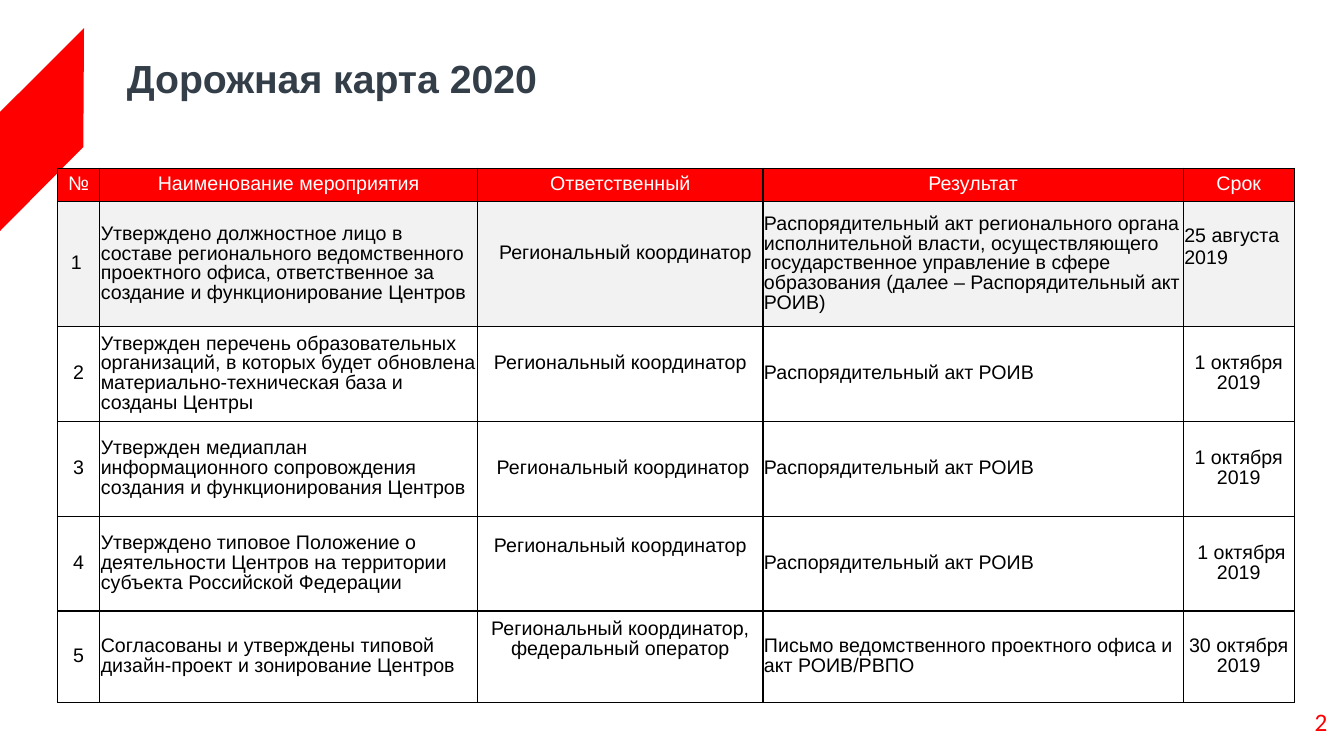
import pptx
import pptx.dml.color
import pptx.enum.text
import pptx.oxml
import pptx.oxml.ns
import pptx.util

Pt = pptx.util.Pt
Align = pptx.enum.text.PP_ALIGN
Anchor = pptx.enum.text.MSO_ANCHOR

COLORS = {
    "accent": "FF0000",
    "title": "333E48",
    "text": "000000",
    "border": "000000",
    "header_text": "FFFFFF",
    "row": "FFFFFF",
    "first_row": "F2F2F2",
}

COLUMN_WIDTHS = [30.25, 270, 203.75, 300.25, 79.25]
ROW_HEIGHTS = [23.75, 89.25, 67.75, 67.75, 67.75, 65.5]
COLUMN_ALIGNS = [Align.CENTER, Align.LEFT, Align.CENTER, Align.LEFT, Align.CENTER]

HEADER = ["№", "Наименование мероприятия", "Ответственный", "Результат", "Срок"]
ACTIVITIES = [
    ["1",
     "Утверждено должностное лицо в составе регионального ведомственного проектного офиса, "
     "ответственное за создание и функционирование Центров",
     "Региональный координатор",
     "Распорядительный акт регионального органа исполнительной власти, осуществляющего "
     "государственное управление в сфере образования (далее – Распорядительный акт РОИВ)",
     "25 августа 2019"],
    ["2",
     "Утвержден перечень образовательных организаций, в которых будет обновлена "
     "материально-техническая база и созданы Центры",
     "Региональный координатор", "Распорядительный акт РОИВ", "1 октября 2019"],
    ["3",
     "Утвержден медиаплан информационного сопровождения создания и функционирования Центров",
     "Региональный координатор", "Распорядительный акт РОИВ", "1 октября 2019"],
    ["4",
     "Утверждено типовое Положение о деятельности Центров на территории субъекта "
     "Российской Федерации",
     "Региональный координатор", "Распорядительный акт РОИВ", "1 октября 2019"],
    ["5",
     "Согласованы и утверждены типовой дизайн-проект и зонирование Центров",
     "Региональный координатор, федеральный оператор",
     "Письмо ведомственного проектного офиса и акт РОИВ/РВПО", "30 октября 2019"],
]

# Cell adjustments by (row, column), in points
BOTTOM_MARGINS = {(1, 2): 15.5, (2, 2): 15.5, (4, 2): 25, (5, 2): 25, (1, 4): 25}
RIGHT_MARGINS = {(1, 0): 4}
FIRST_LINE_INDENTS = {(1, 2): 7.25, (3, 2): 4, (4, 4): 4}
SPECIAL_ALIGNS = {(1, 4): Align.LEFT}
SPECIAL_SPACING = {(1, 4): 1.0}


def rgb(name):
    return pptx.dml.color.RGBColor.from_string(COLORS[name])


def add_span(para, text, size, color, font="Arial", bold=False):
    span = para.add_run()
    span.text = text
    span.font.name = font
    span.font.size = Pt(size)
    span.font.bold = bold
    span.font.color.rgb = rgb(color)


def set_margins(frame, margin):
    frame.margin_left = frame.margin_right = Pt(margin)
    frame.margin_top = frame.margin_bottom = Pt(margin)


def add_ribbon(page, left, top, width, height):
    """Slanted band whose sides are vertical and whose ends rise to the right."""
    rise = 60
    corners = [(left + width, top), (left + width - 0.5, top + height - rise),
               (left, top + height), (left, top + rise)]
    builder = page.shapes.build_freeform(Pt(corners[0][0]), Pt(corners[0][1]))
    builder.add_line_segments([(Pt(x), Pt(y)) for x, y in corners[1:]], close=True)
    ribbon = builder.convert_to_shape()
    ribbon.shadow.inherit = False
    ribbon.fill.solid()
    ribbon.fill.fore_color.rgb = rgb("accent")
    ribbon.line.fill.background()


def add_title(page, left, top, width, height):
    title = page.shapes.title
    title.left, title.top, title.width, title.height = map(Pt, (left, top, width, height))
    frame = title.text_frame
    frame.auto_size = pptx.enum.text.MSO_AUTO_SIZE.NONE
    frame.word_wrap = True
    frame.vertical_anchor = Anchor.MIDDLE
    set_margins(frame, 3.6)
    para = frame.paragraphs[0]
    para.alignment = Align.LEFT
    para.line_spacing = 0.9
    add_span(para, "Дорожная карта 2020", 28, "title", bold=True)


def add_borders(cell):
    properties = cell._tc.get_or_add_tcPr()
    for side in ("lnL", "lnR", "lnT", "lnB"):
        properties.append(pptx.oxml.parse_xml(
            f'<a:{side} {pptx.oxml.ns.nsdecls("a")} w="{Pt(1)}"><a:solidFill>'
            f'<a:srgbClr val="{COLORS["border"]}"/></a:solidFill></a:{side}>'))


def fill_cell(cell, text, place):
    row, column = place
    margin = 0 if column == 2 else 0.75
    cell.vertical_anchor = Anchor.MIDDLE
    cell.margin_left = cell.margin_top = Pt(margin)
    cell.margin_right = Pt(RIGHT_MARGINS.get(place, margin))
    cell.margin_bottom = Pt(BOTTOM_MARGINS.get(place, margin))
    add_borders(cell)
    cell.fill.solid()
    cell.fill.fore_color.rgb = rgb({0: "accent", 1: "first_row"}.get(row, "row"))

    para = cell.text_frame.paragraphs[0]
    para.alignment = Align.CENTER if row == 0 else SPECIAL_ALIGNS.get(place, COLUMN_ALIGNS[column])
    para.line_spacing = SPECIAL_SPACING.get(place, 0.9)
    if place in FIRST_LINE_INDENTS:
        para._p.get_or_add_pPr().set("indent", str(Pt(FIRST_LINE_INDENTS[place])))
    add_span(para, text, 14, "header_text" if row == 0 else "text")


def add_roadmap(page, left, top):
    rows = [HEADER] + ACTIVITIES
    table = page.shapes.add_table(
        len(rows), len(HEADER), Pt(left), Pt(top),
        Pt(sum(COLUMN_WIDTHS)), Pt(sum(ROW_HEIGHTS))).table
    table.horz_banding = False
    for column, width in zip(table.columns, COLUMN_WIDTHS):
        column.width = Pt(width)
    for row, height in zip(table.rows, ROW_HEIGHTS):
        row.height = Pt(height)
    for row, texts in enumerate(rows):
        for column, text in enumerate(texts):
            fill_cell(table.cell(row, column), text, (row, column))


def add_page_number(page, left, top, width, height):
    box = page.shapes.add_textbox(Pt(left), Pt(top), Pt(width), Pt(height))
    frame = box.text_frame
    frame.word_wrap = False
    set_margins(frame, 3.6)
    para = frame.paragraphs[0]
    para.alignment = Align.RIGHT
    add_span(para, "2", 18, "accent", font="Calibri")


def main():
    deck = pptx.Presentation()
    deck.slide_width, deck.slide_height = Pt(960), Pt(540)
    page = deck.slides.add_slide(deck.slide_layouts[5])  # Title Only
    add_ribbon(page, 0, 20, 60, 145)
    add_title(page, 87, 21.5, 634.5, 72)
    add_roadmap(page, 41, 120.25)
    add_page_number(page, 934.5, 501, 17.25, 28)
    deck.save("out.pptx")


if __name__ == "__main__":
    main()
